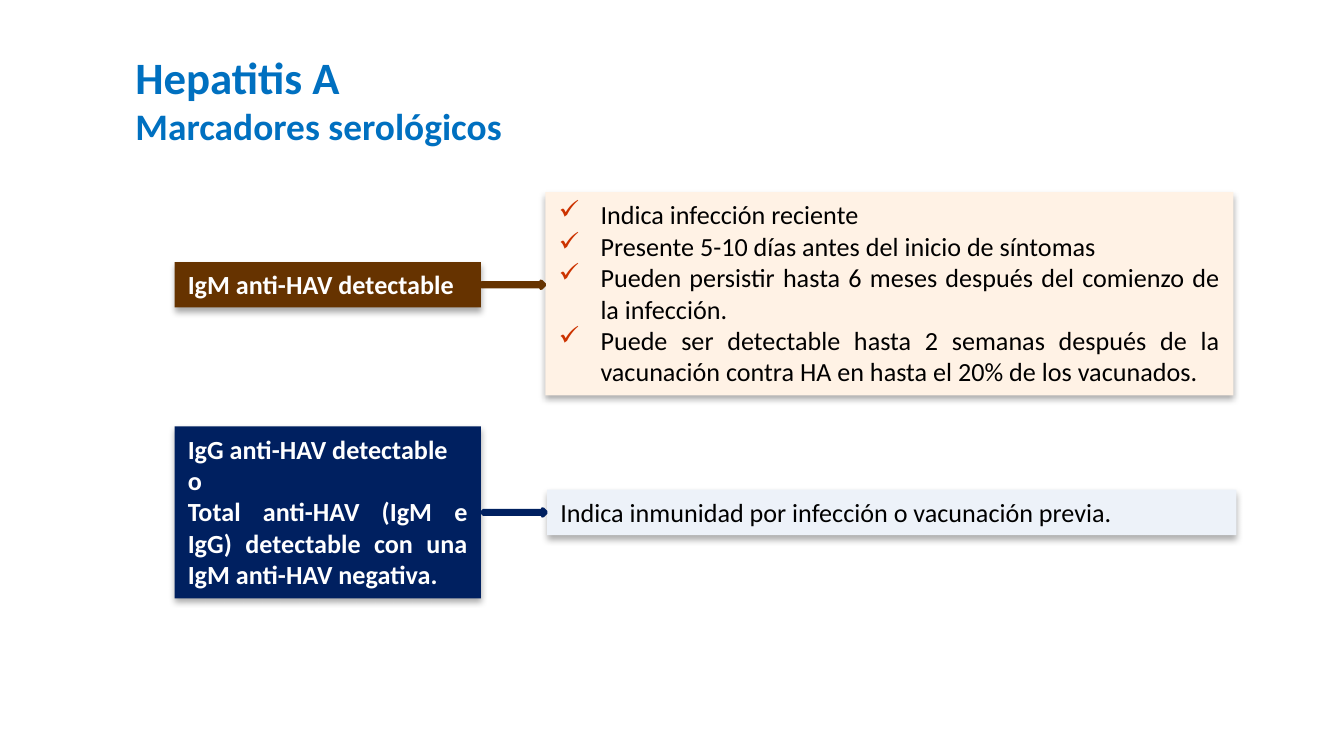
import pptx
import pptx.util
import pptx.dml.color
import pptx.enum.shapes
import pptx.enum.text
import pptx.oxml
import pptx.oxml.ns

Cm, Pt = pptx.util.Cm, pptx.util.Pt
KIND = pptx.enum.shapes.MSO_SHAPE
TEXT = pptx.enum.text
FONT = "Calibri"

# Content
TITLE = [("Hepatitis A", 24), ("Marcadores serológicos", 20)]
IGM = ["IgM anti-HAV detectable"]
RECENT = [
    "Indica infección reciente",
    "Presente 5-10 días antes del inicio de síntomas",
    "Pueden persistir hasta 6 meses después del comienzo de la infección.",
    "Puede ser detectable hasta 2 semanas después de la vacunación contra HA "
    "en hasta el 20% de los vacunados.",
]
IGG = [
    "IgG anti-HAV detectable",
    "o",
    "Total anti-HAV (IgM e IgG) detectable con una IgM anti-HAV negativa.",
]
IMMUNE = ["Indica inmunidad por infección o vacunación previa."]

# Each row: middle of the marker, then (lines, height, fill) of the marker,
# then (lines, left, top, width, height, fill, ticks) of its meaning
ROWS = [
    (5.38, (IGM, 0.86, "663300"),
     (RECENT, 10.31, 3.63, 13.0, 3.84, "FFF2E5", True)),
    (9.68, (IGG, 3.25, "002060"),
     (IMMUNE, 10.34, 9.25, 13.03, 0.86, "EDF2F9", False)),
]
LEFT, WIDTH = 3.3, 5.79
LONG, THICK = 1.19, 0.13


def color(hex):
    return pptx.dml.color.RGBColor.from_string(hex)


def node(tag, inner="", **attrs):
    text = " ".join(f'{key}="{val}"' for key, val in attrs.items())
    space = pptx.oxml.ns.nsdecls("a")
    return pptx.oxml.parse_xml(f"<a:{tag} {space} {text}>{inner}</a:{tag}>")


def shape(kind, x, y, w, h, fill):
    item = slide.shapes.add_shape(kind, Cm(x), Cm(y), Cm(w), Cm(h))
    item.shadow.inherit = False
    item.fill.solid()
    item.fill.fore_color.rgb = color(fill)
    return item


def tick(para):
    props = para._p.get_or_add_pPr()
    props.set("marL", str(Cm(0.79)))
    props.set("indent", str(-Cm(0.79)))
    props.append(node("buClr", '<a:srgbClr val="CC3300"/>'))
    props.append(node("buFont", typeface="Wingdings"))
    props.append(node("buChar", char="ü"))


def box(lines, x, y, w, h, fill, ink, bold=False, ticks=False):
    item = shape(KIND.RECTANGLE, x, y, w, h, fill)
    item.line.fill.background()
    # Soft shadow below the box
    glow = item._element.spPr.find(pptx.oxml.ns.qn("a:effectLst"))
    glow.append(node(
        "outerShdw",
        '<a:srgbClr val="000000"><a:alpha val="32000"/></a:srgbClr>',
        blurRad=Pt(3.5), dist=Pt(2.2), dir=90 * 60000, rotWithShape=0))
    frame = item.text_frame
    frame.word_wrap = True
    frame.auto_size = TEXT.MSO_AUTO_SIZE.SHAPE_TO_FIT_TEXT
    frame.vertical_anchor = TEXT.MSO_ANCHOR.TOP
    frame.text = "\n".join(lines)
    for para in frame.paragraphs:
        para.alignment = TEXT.PP_ALIGN.JUSTIFY
        if ticks:
            tick(para)
        para.font.name, para.font.size = FONT, Pt(14)
        para.font.bold = bold
        para.font.color.rgb = color(ink)


deck = pptx.Presentation()
deck.slide_width, deck.slide_height = Cm(25.4), Cm(14.28)
slide = deck.slides.add_slide(deck.slide_layouts[6])

# Title
frame = slide.shapes.add_textbox(
    Cm(2.31), Cm(0.66), Cm(21.79), Cm(2.41)).text_frame
frame.word_wrap = True
frame.vertical_anchor = TEXT.MSO_ANCHOR.MIDDLE
para = frame.paragraphs[0]
para.font.name, para.font.bold = FONT, True
para.font.color.rgb = color("0070C0")
for num, (words, size) in enumerate(TITLE):
    if num:
        para.add_line_break()
    run = para.add_run()
    run.text, run.font.size = words, Pt(size)

# Markers, their meanings and the arrows between them
for mid, (lines, high, fill), (facts, x, y, w, h, pale, ticks) in ROWS:
    box(lines, LEFT, mid - high / 2, WIDTH, high, fill, "FFFFFF", bold=True)
    box(facts, x, y, w, h, pale, "000000", ticks=ticks)
    arrow = shape(KIND.RIGHT_ARROW, x - LONG - 0.02, mid - THICK / 2,
                  LONG, THICK, fill)
    arrow.line.color.rgb = color(fill)
    arrow.line.width = Pt(2)

deck.save("out.pptx")
